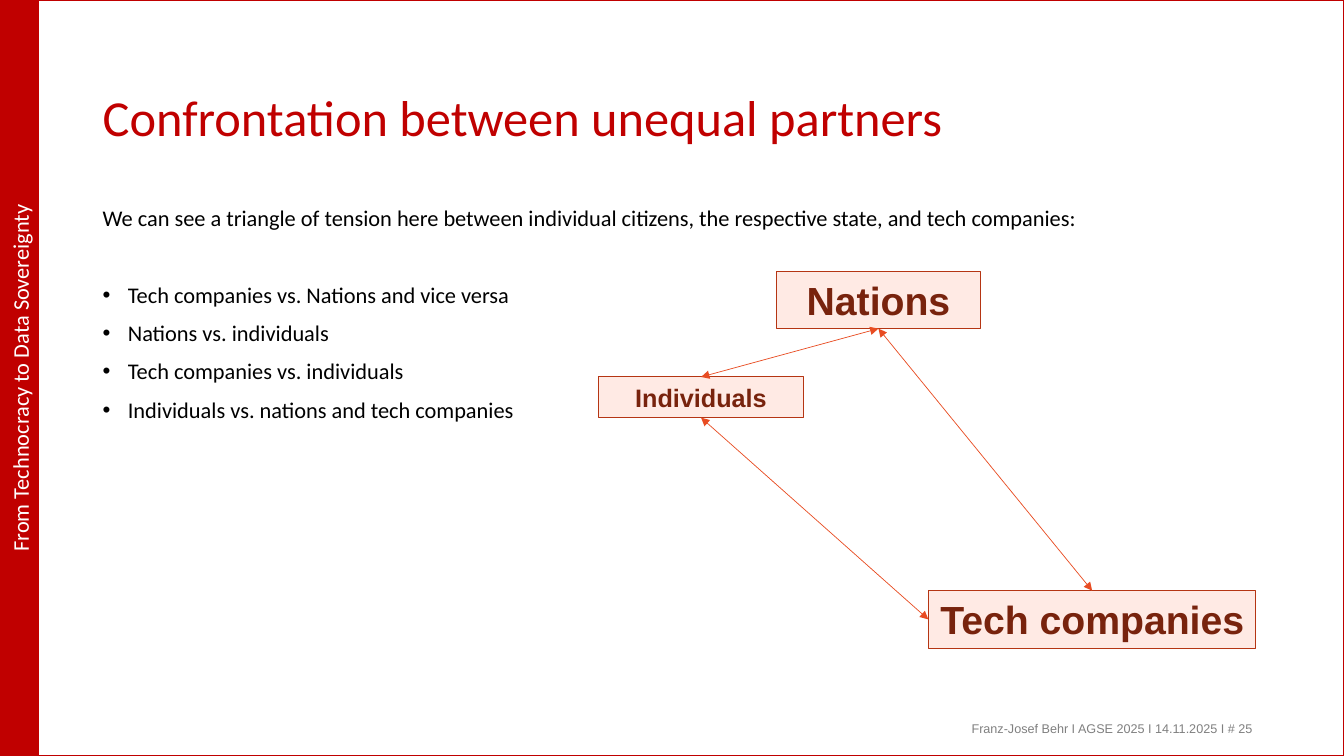
from dataclasses import dataclass

from lxml.etree import SubElement
from pptx import Presentation
from pptx.dml.color import RGBColor
from pptx.enum.shapes import MSO_CONNECTOR, MSO_SHAPE
from pptx.enum.text import MSO_ANCHOR, PP_ALIGN
from pptx.oxml.ns import qn
from pptx.util import Inches, Pt


@dataclass(frozen=True)
class Theme:
    red: str = "C00000"
    white: str = "FFFFFF"
    black: str = "000000"
    grey: str = "808080"
    node_fill: str = "FFEAE4"
    node_line: str = "B53513"
    node_text: str = "78230D"
    arrow: str = "E84C22"
    heading_font: str = "Calibri"
    label_font: str = "Arial"
    title_size: int = 36
    body_size: int = 16
    large_size: int = 28
    small_size: int = 18
    footer_size: int = 9


THEME = Theme()
WIDTH, HEIGHT = Inches(13.33), Inches(7.5)
COLUMNS, ROWS = 160, 90
TOP, LEFT, BOTTOM = 0, 1, 2

BULLETS = [
    "Tech companies vs. Nations and vice versa",
    "Nations vs. individuals",
    "Tech companies vs. individuals",
    "Individuals vs. nations and tech companies",
]


def place(left, top, width, height):
    return (
        round(WIDTH * left / COLUMNS),
        round(HEIGHT * top / ROWS),
        round(WIDTH * width / COLUMNS),
        round(HEIGHT * height / ROWS),
    )


def style(para, name, size, color, bold=False):
    para.font.name = name
    para.font.size = Pt(size)
    para.font.bold = bold
    para.font.color.rgb = RGBColor.from_string(color)


def add_bullet(para, indent):
    properties = para._p.get_or_add_pPr()
    properties.set("marL", str(Inches(indent)))
    properties.set("indent", str(-Inches(indent)))
    SubElement(properties, qn("a:buFont"), typeface=THEME.label_font)
    SubElement(properties, qn("a:buChar"), char="•")


def add_text(page, area, lines, name, size, color, anchor=MSO_ANCHOR.TOP):
    frame = page.shapes.add_textbox(*place(*area)).text_frame
    frame.word_wrap = True
    frame.vertical_anchor = anchor
    for index, line in enumerate(lines):
        para = frame.add_paragraph() if index else frame.paragraphs[0]
        para.text = line
        para.line_spacing = 0.9
        style(para, name, size, color)
    return frame


def add_box(page, area, line, line_width, fill=None):
    box = page.shapes.add_shape(MSO_SHAPE.RECTANGLE, *place(*area))
    box.shadow.inherit = False
    box.line.color.rgb = RGBColor.from_string(line)
    box.line.width = Pt(line_width)
    if fill:
        box.fill.solid()
        box.fill.fore_color.rgb = RGBColor.from_string(fill)
    else:
        box.fill.background()
    return box


def label(box, text, name, size, color, bold=False):
    box.text_frame.word_wrap = False
    box.text_frame.vertical_anchor = MSO_ANCHOR.TOP
    para = box.text_frame.paragraphs[0]
    para.text = text
    para.alignment = PP_ALIGN.CENTER
    style(para, name, size, color, bold)


def add_node(page, text, size, area):
    box = add_box(page, area, THEME.node_line, 0.75, THEME.node_fill)
    label(box, text, THEME.label_font, size, THEME.node_text, True)
    return box


def add_double_arrow(page, start, start_side, end, end_side):
    arrow = page.shapes.add_connector(MSO_CONNECTOR.STRAIGHT, 0, 0, 0, 0)
    arrow.begin_connect(start, start_side)
    arrow.end_connect(end, end_side)
    arrow.line.color.rgb = RGBColor.from_string(THEME.arrow)
    arrow.line.width = Pt(0.5)
    outline = arrow.line._get_or_add_ln()
    for tip in ("a:headEnd", "a:tailEnd"):
        SubElement(outline, qn(tip), type="triangle")
    SubElement(arrow._element.spPr, qn("a:effectLst"))


def add_side_band(page):
    thickness, center = 4.44, 2.4
    area = (center - ROWS / 2, (ROWS - thickness) / 2, ROWS, thickness)
    band = add_box(page, area, THEME.red, 0.75, THEME.red)
    band.rotation = 270
    label(band, "From Technocracy to Data Sovereignty",
          THEME.heading_font, THEME.body_size, THEME.white)


def add_body(page):
    intro = ("We can see a triangle of tension here between individual citizens, "
             "the respective state, and tech companies:")
    frame = add_text(page, (11.04, 24.12, 138, 56.88), [intro, *BULLETS],
                     THEME.heading_font, THEME.body_size, THEME.black)
    bullets = frame.paragraphs[1:]
    for para in bullets:
        para.space_before = Pt(10)
        add_bullet(para, 0.25)
    bullets[0].space_before = Pt(37.5)


def add_triangle(page):
    individuals = add_node(page, "Individuals", THEME.small_size,
                           (71.28, 44.88, 24.36, 4.84))
    nations = add_node(page, "Nations", THEME.large_size,
                       (92.4, 32.28, 24.36, 6.84))
    companies = add_node(page, "Tech companies", THEME.large_size,
                         (110.52, 70.32, 39, 6.84))
    add_double_arrow(page, individuals, TOP, nations, BOTTOM)
    add_double_arrow(page, nations, BOTTOM, companies, TOP)
    add_double_arrow(page, individuals, BOTTOM, companies, LEFT)


def main():
    deck = Presentation()
    deck.slide_width, deck.slide_height = WIDTH, HEIGHT
    page = deck.slides.add_slide(deck.slide_layouts[6])
    add_side_band(page)
    add_text(page, (114.48, 85.44, 41.28, 3.72),
             ["Franz-Josef Behr I AGSE 2025 I 14.11.2025 I # 25"],
             THEME.label_font, THEME.footer_size, THEME.grey)
    add_box(page, (0, 0, COLUMNS, ROWS), THEME.red, 1)
    add_text(page, (11.04, 6.6, 138, 15.48),
             ["Confrontation between unequal partners"],
             THEME.heading_font, THEME.title_size, THEME.red, MSO_ANCHOR.MIDDLE)
    add_body(page)
    add_triangle(page)
    deck.save("out.pptx")


if __name__ == "__main__":
    main()
